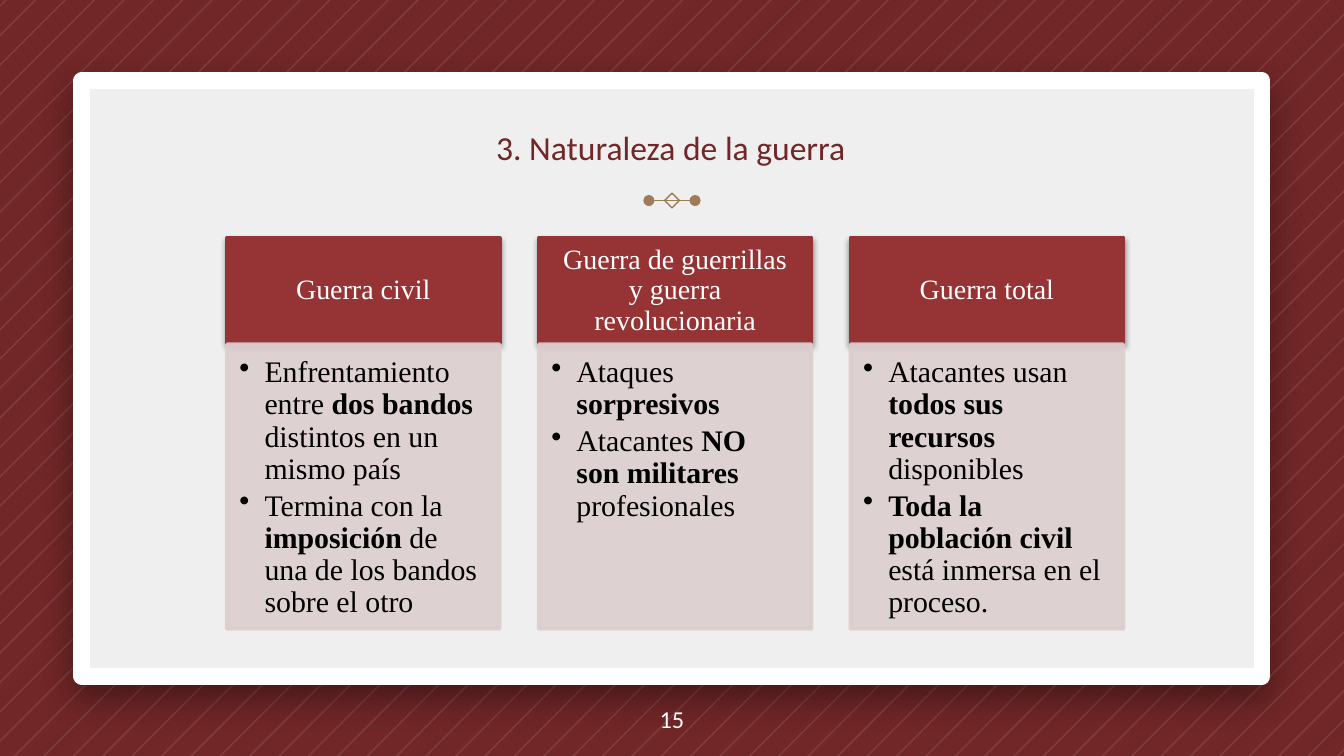
"""Build the slide on the nature of war: three war types, each with a heading and bullet points."""
from dataclasses import dataclass
from typing import NamedTuple, Optional

from lxml.etree import SubElement
from pptx import Presentation
from pptx.dml.color import RGBColor
from pptx.enum.shapes import MSO_CONNECTOR, MSO_SHAPE as Preset
from pptx.enum.text import MSO_ANCHOR as Anchor, MSO_AUTO_SIZE as AutoSize, PP_ALIGN as Align
from pptx.oxml.ns import qn
from pptx.shapes.base import BaseShape
from pptx.util import Emu, Pt

WIDTH, HEIGHT = 1280, 720
SCALE = 9144000 / WIDTH


@dataclass(frozen=True)
class Theme:
    wine: str = "712627"
    white: str = "FFFFFF"
    paper: str = "EFEFEF"
    gold: str = "9E7C59"
    red: str = "963334"
    rose: str = "DDCECE"
    black: str = "000000"
    sans: str = "Calibri"
    serif: str = "Times New Roman"
    title_size: int = 18
    number_size: int = 13
    heading_size: int = 15
    point_size: int = 16


class Box(NamedTuple):
    left: int
    top: int
    width: int
    height: int


class Shadow(NamedTuple):
    opacity: int
    blur: float
    distance: float


class WarType(NamedTuple):
    """A heading with its points; words between asterisks are bold."""
    heading: str
    points: tuple[str, ...]


THEME = Theme()
PANEL = Box(78, 77, 1124, 567)
TITLE = Box(125, 88, 1028, 84)
NUMBER = Box(0, 650, WIDTH, 70)
HEADING = Box(216, 227, 260, 100)
POINTS = Box(216, 328, 260, 271)
COLUMN_PITCH = 297
STRIPE_START, STRIPE_PITCH, STRIPE_WIDTH = 5, 28, 2
ORNAMENT_Y, ORNAMENT_REACH, DIAMOND_SIZE = 191, 22, 14
POINT_INDENT = 24
PANEL_SHADOW = Shadow(35, 16.9, 7.5)
HEADING_SHADOW = Shadow(38, 3.1, 1.6)

WAR_TYPES = (
    WarType("Guerra civil", (
        "Enfrentamiento entre *dos bandos *distintos en un mismo país",
        "Termina con la *imposición *de una de los bandos sobre el otro")),
    WarType("Guerra de guerrillas y guerra revolucionaria", (
        "Ataques *sorpresivos*",
        "Atacantes *NO son militares *profesionales")),
    WarType("Guerra total", (
        "Atacantes usan *todos sus recursos *disponibles",
        "*Toda la población civil *está inmersa en el proceso.")),
)


def px(length: int) -> Emu:
    """Turn px into EMU."""
    return Emu(round(length * SCALE))


def rgb(color: str) -> RGBColor:
    """Turn a hex string into a colour."""
    return RGBColor.from_string(color)


def set_opacity(shape: BaseShape, percent: int) -> None:
    """Make the fill and line colours of a shape partly transparent."""
    for color in shape._element.spPr.iter(qn("a:srgbClr")):
        SubElement(color, qn("a:alpha"), val=str(percent * 1000))


def add_shadow(shape: BaseShape, shadow: Shadow) -> None:
    """Cast a black shadow straight down."""
    effects = shape._element.spPr.find(qn("a:effectLst"))
    outer = SubElement(effects, qn("a:outerShdw"), blurRad=str(Pt(shadow.blur)),
                       dist=str(Pt(shadow.distance)), dir="5400000", algn="t", rotWithShape="0")
    color = SubElement(outer, qn("a:srgbClr"), val=THEME.black)
    SubElement(color, qn("a:alpha"), val=str(shadow.opacity * 1000))


def add_block(shapes, preset: Preset, box: Box, fill: Optional[str], line: str,
              line_width: float) -> BaseShape:
    """Add a preset shape with its fill and outline."""
    block = shapes.add_shape(preset, *map(px, box))
    block.shadow.inherit = False
    if fill:
        block.fill.solid()
        block.fill.fore_color.rgb = rgb(fill)
    else:
        block.fill.background()
    block.line.color.rgb = rgb(line)
    block.line.width = Pt(line_width)
    return block


def set_frame(frame, anchor: Anchor, left: int, top: int, right: int, bottom: int) -> None:
    """Set wrapping, anchor and insets of a text frame."""
    frame.word_wrap = True
    frame.auto_size = AutoSize.NONE
    frame.vertical_anchor = anchor
    frame.margin_left, frame.margin_top = px(left), px(top)
    frame.margin_right, frame.margin_bottom = px(right), px(bottom)


def style(paragraph, font: str, size: int, color: str, align: Align = Align.CENTER) -> None:
    """Set the font and alignment of a paragraph."""
    paragraph.alignment = align
    paragraph.font.name = font
    paragraph.font.size = Pt(size)
    paragraph.font.color.rgb = rgb(color)


def add_stripes(shapes) -> None:
    """Cover the slide with thin diagonal stripes in one outline."""
    def ends(offset: int) -> list[tuple[int, int]]:
        return [(min(offset, WIDTH), max(0, offset - WIDTH)),
                (max(0, offset - HEIGHT), min(offset, HEIGHT))]

    outline = shapes.build_freeform(0, 0, scale=SCALE)
    for offset in range(STRIPE_START, WIDTH + HEIGHT - STRIPE_WIDTH, STRIPE_PITCH):
        first, *others = ends(offset) + ends(offset + STRIPE_WIDTH)[::-1]
        outline.move_to(*first)
        outline.add_line_segments(others, close=True)
    stripes = outline.convert_to_shape()
    stripes.shadow.inherit = False
    stripes.fill.solid()
    stripes.fill.fore_color.rgb = rgb(THEME.white)
    stripes.line.fill.background()
    set_opacity(stripes, 10)


def add_ornament(shapes) -> None:
    """Add the dotted line with a diamond below the title."""
    center = WIDTH // 2
    ornament = shapes.add_group_shape().shapes
    rule = ornament.add_connector(MSO_CONNECTOR.STRAIGHT, px(center - ORNAMENT_REACH), px(ORNAMENT_Y),
                                  px(center + ORNAMENT_REACH), px(ORNAMENT_Y))
    rule.line.color.rgb = rgb(THEME.gold)
    rule.line.width = Pt(0.75)
    properties = rule._element.spPr
    for end in ("a:headEnd", "a:tailEnd"):
        SubElement(properties.find(qn("a:ln")), qn(end), type="oval")
    SubElement(properties, qn("a:effectLst"))
    half = DIAMOND_SIZE // 2
    add_block(ornament, Preset.DIAMOND, Box(center - half, ORNAMENT_Y - half, DIAMOND_SIZE, DIAMOND_SIZE),
              None, THEME.gold, 0.75)


def add_title(slide, text: str) -> None:
    """Place the title in front of the panel."""
    title = slide.shapes.title
    slide.shapes._spTree.append(title._element)
    title.left, title.top, title.width, title.height = map(px, TITLE)
    title.text = text
    set_frame(title.text_frame, Anchor.BOTTOM, 13, 13, 13, 13)
    style(title.text_frame.paragraphs[0], THEME.sans, THEME.title_size, THEME.wine)


def add_number(shapes, text: str) -> None:
    """Add the page number at the foot of the slide."""
    frame = shapes.add_textbox(*map(px, NUMBER)).text_frame
    set_frame(frame, Anchor.MIDDLE, 13, 13, 13, 13)
    frame.text = text
    style(frame.paragraphs[0], THEME.sans, THEME.number_size, THEME.white)


def add_point(paragraph, text: str) -> None:
    """Write one bullet point with its bold words."""
    style(paragraph, THEME.serif, THEME.point_size, THEME.black, Align.LEFT)
    paragraph.line_spacing = 0.9
    paragraph.space_after = Pt(2.4)
    properties = paragraph._p.get_or_add_pPr()
    properties.set("marL", str(px(POINT_INDENT)))
    properties.set("indent", str(-px(POINT_INDENT)))
    bullet = properties.makeelement(qn("a:buChar"), {"char": "•"})
    properties.find(qn("a:defRPr")).addprevious(bullet)
    for index, words in enumerate(text.split("*")):
        if words:
            run = paragraph.add_run()
            run.text = words
            run.font.bold = index % 2 == 1


def add_war_type(shapes, war: WarType, shift: int) -> None:
    """Add one column: a heading over its points."""
    heading = add_block(shapes, Preset.RECTANGLE, HEADING._replace(left=HEADING.left + shift),
                        THEME.red, THEME.red, 2)
    add_shadow(heading, HEADING_SHADOW)
    set_frame(heading.text_frame, Anchor.MIDDLE, 15, 9, 15, 9)
    heading.text_frame.text = war.heading
    caption = heading.text_frame.paragraphs[0]
    style(caption, THEME.serif, THEME.heading_size, THEME.white)
    caption.line_spacing = 0.9

    body = add_block(shapes, Preset.RECTANGLE, POINTS._replace(left=POINTS.left + shift),
                     THEME.rose, THEME.rose, 2)
    set_opacity(body, 90)
    frame = body.text_frame
    set_frame(frame, Anchor.TOP, 12, 12, 15, 18)
    for index, point in enumerate(war.points):
        add_point(frame.add_paragraph() if index else frame.paragraphs[0], point)


def main() -> None:
    """Build and save the slide."""
    deck = Presentation()
    deck.slide_width, deck.slide_height = px(WIDTH), px(HEIGHT)
    slide = deck.slides.add_slide(deck.slide_layouts[5])
    slide.background.fill.solid()
    slide.background.fill.fore_color.rgb = rgb(THEME.wine)
    add_stripes(slide.shapes)
    panel = add_block(slide.shapes, Preset.RECTANGLE, PANEL, THEME.paper, THEME.white, 9)
    add_shadow(panel, PANEL_SHADOW)
    add_ornament(slide.shapes)
    add_title(slide, "3. Naturaleza de la guerra")
    add_number(slide.shapes, "15")
    for column, war in enumerate(WAR_TYPES):
        add_war_type(slide.shapes, war, column * COLUMN_PITCH)
    deck.save("out.pptx")


if __name__ == "__main__":
    main()
